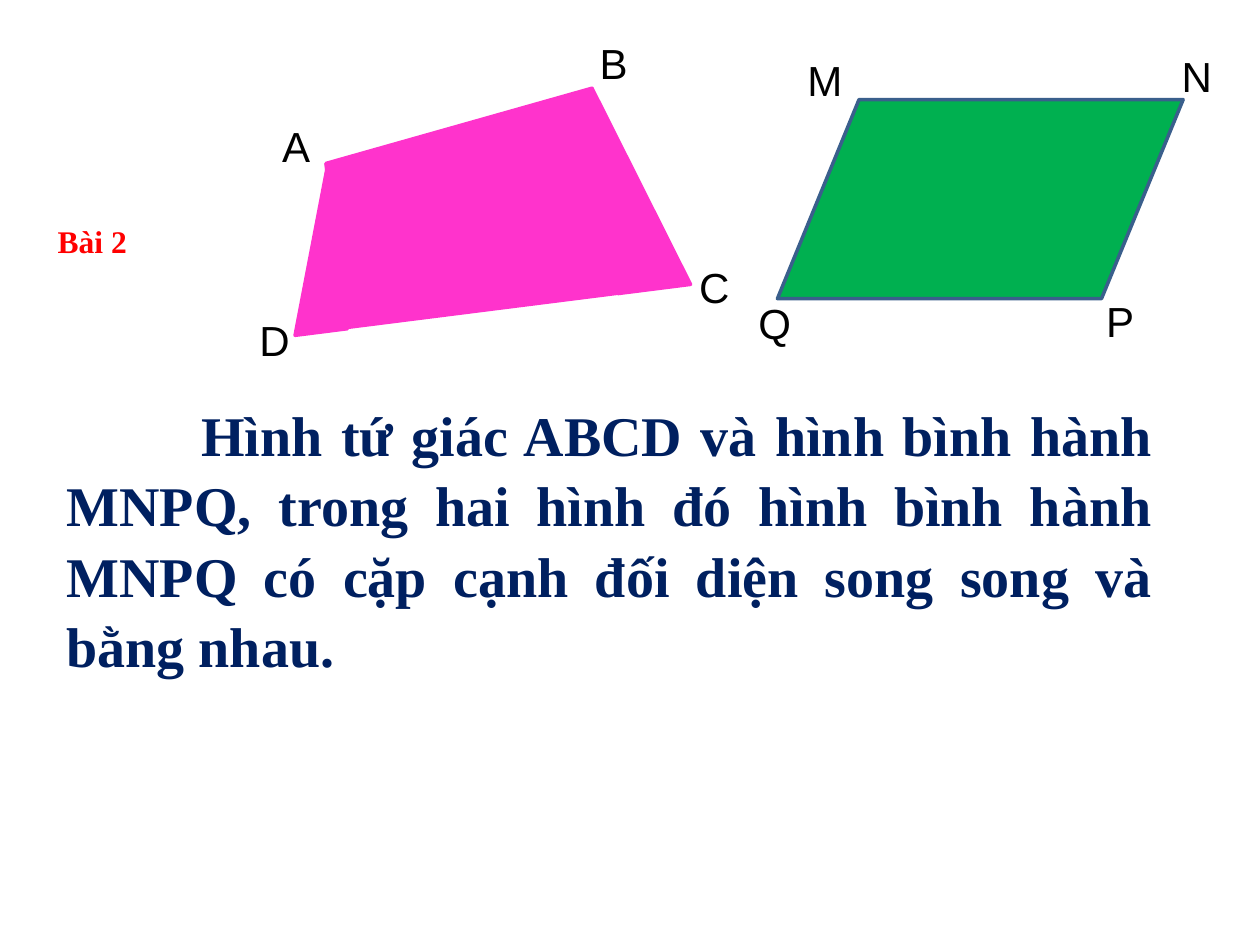
"""Build a geometry slide with a quadrilateral, a parallelogram and a sentence about them."""
from pptx import Presentation
from pptx.dml.color import RGBColor
from pptx.enum import shapes, text
from pptx.util import Inches, Pt

PINK = RGBColor(0xFF, 0x33, 0xCC)
GREEN = RGBColor(0x00, 0xB0, 0x50)
OUTLINE = RGBColor(0x3A, 0x5F, 0x8C)
NAVY = RGBColor(0x00, 0x20, 0x60)
RED = RGBColor(0xFF, 0x00, 0x00)
BLACK = RGBColor(0x00, 0x00, 0x00)
KIND = shapes.MSO_SHAPE


def add_text(parent, words, bounds, font, size, color, bold=False):
    box = parent.shapes.add_textbox(*map(Inches, bounds))
    box.text_frame.word_wrap = True
    para = box.text_frame.paragraphs[0]
    para.text = words
    para.font.name = font
    para.font.size = Pt(size)
    para.font.bold = bold
    para.font.color.rgb = color
    return para


def add_figure(parent, kind, bounds, fill, line):
    figure = parent.shapes.add_shape(kind, *map(Inches, bounds))
    figure.shadow.inherit = False
    figure.fill.solid()
    figure.fill.fore_color.rgb = fill
    figure.line.color.rgb = line
    figure.line.width = Pt(2)
    return figure


deck = Presentation()
deck.slide_width, deck.slide_height = Inches(10), Inches(7.5)
page = deck.slides.add_slide(deck.slide_layouts[6])

sentence = add_text(
    page,
    "Hình tứ giác ABCD và hình bình hành MNPQ, trong hai hình đó hình bình hành "
    "MNPQ có cặp cạnh đối diện song song và bằng nhau.",
    (0.43, 3.1, 8.82, 2.26), "Times New Roman", 32, NAVY, True)
sentence.alignment = text.PP_ALIGN.JUSTIFY
sentence.line_spacing = 1.05
sentence._p.get_or_add_pPr().set("indent", str(Inches(1.07)))

heading = add_text(page, "Bài 2", (0.36, 1.35, 1.03, 0.67), "Times New Roman", 18, RED, True)
heading.alignment = text.PP_ALIGN.JUSTIFY
heading.line_spacing = Pt(48)

quadrilateral = page.shapes.add_group_shape()
for kind, bounds, flipped in [
    (KIND.FLOWCHART_MANUAL_INPUT, (2.64, 0.83, 2.17, 1.64), False),
    (KIND.RIGHT_TRIANGLE, (4.8, 0.66, 0.58, 1.64), False),
    (KIND.RIGHT_TRIANGLE, (2.26, 1.35, 0.42, 1.29), True),
]:
    piece = add_figure(quadrilateral, kind, bounds, PINK, PINK)
    piece.rotation = 352.8
    if flipped:
        piece._element.spPr.xfrm.set("flipH", "1")

parallelogram = page.shapes.add_group_shape()
slanted = add_figure(parallelogram, KIND.PARALLELOGRAM, (6.17, 0.79, 3.22, 1.58), GREEN, OUTLINE)
slanted.adjustments[0] = 0.41

for group, width, corners in [
    (quadrilateral, 0.58,
     {"A": (2.14, 0.91), "B": (4.66, 0.25), "C": (5.45, 2.03), "D": (1.96, 2.45)}),
    (parallelogram, 0.5,
     {"M": (6.31, 0.38), "N": (9.28, 0.35), "P": (8.68, 2.3), "Q": (5.92, 2.31)}),
]:
    for letter, (left, top) in corners.items():
        add_text(group, letter, (left, top, width, 0.5), "Arial", 24, BLACK)

deck.save("out.pptx")
